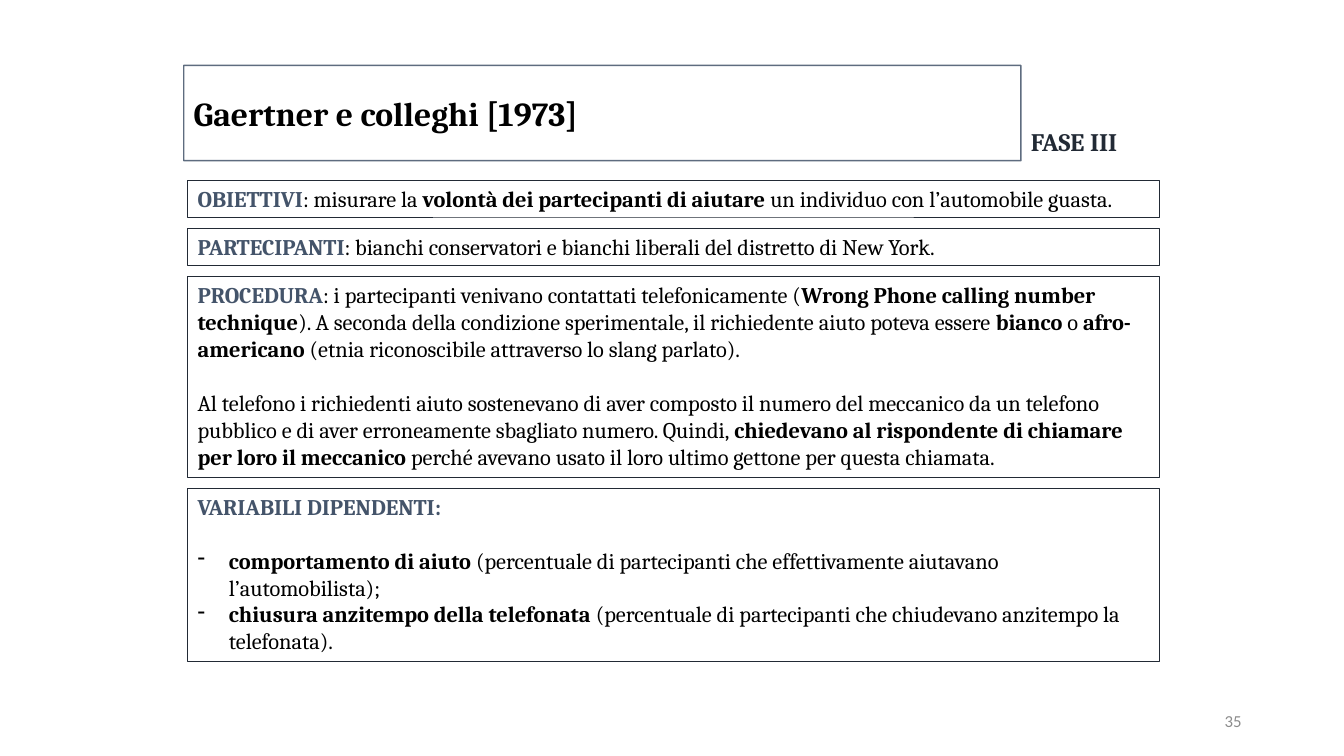
from lxml.etree import SubElement
from pptx import Presentation
from pptx.dml.color import RGBColor
from pptx.enum.shapes import MSO_SHAPE
from pptx.enum.text import MSO_ANCHOR, PP_ALIGN
from pptx.oxml.ns import qn
from pptx.util import Cm, Pt

SLATE, INK, BLACK, GREY = "44546A", "222A35", "000000", "8C8C8C"
BLANK_LINE = 19.2  # points, one line of 16 pt text

# Each section: height in cm, label, paragraphs as (text, space before, dashed).
# Text between asterisks is bold; the first paragraph follows the label.
SECTIONS = [
    (0.94, "OBIETTIVI", [
        (": misurare la *volontà dei partecipanti di aiutare *"
         "un individuo con l’automobile guasta.", 0, False)]),
    (0.94, "PARTECIPANTI", [
        (": bianchi conservatori e bianchi liberali del distretto di New York.", 0, False)]),
    (5.05, "PROCEDURA", [
        (": i partecipanti venivano contattati telefonicamente "
         "(*Wrong Phone calling number technique*). A seconda della condizione "
         "sperimentale, il richiedente aiuto poteva essere *bianco* o "
         "*afro-americano* (etnia riconoscibile attraverso lo slang parlato).", 0, False),
        ("Al telefono i richiedenti aiuto sostenevano di aver composto il numero del "
         "meccanico da un telefono pubblico e di aver erroneamente sbagliato numero. "
         "Quindi, *chiedevano al rispondente di chiamare per loro il meccanico* "
         "perché avevano usato il loro ultimo gettone per questa chiamata.",
         BLANK_LINE, False)]),
    (4.37, "VARIABILI DIPENDENTI:", [
        ("", 0, False),
        ("*comportamento di aiuto *(percentuale di partecipanti che "
         "effettivamente aiutavano l’automobilista);", BLANK_LINE, True),
        ("*chiusura anzitempo della telefonata *(percentuale di partecipanti "
         "che chiudevano anzitempo la telefonata).", 0, True)]),
]


def rgb(hex_color):
    return RGBColor.from_string(hex_color)


def add_text(paragraph, text, size=16, color=BLACK, bold=False, font="Cambria"):
    run = paragraph.add_run()
    run.text = text
    run.font.name = font
    run.font.size = Pt(size)
    run.font.bold = bold
    run.font.color.rgb = rgb(color)


def add_marked_text(paragraph, text):
    """Adds text whose parts between asterisks are bold."""
    for index, part in enumerate(text.split("*")):
        if part:
            add_text(paragraph, part, bold=index % 2 == 1)


def add_dash(paragraph):
    properties = paragraph._p.get_or_add_pPr()
    properties.set("marL", str(Cm(0.79)))
    properties.set("indent", str(-Cm(0.79)))
    SubElement(properties, qn("a:buFontTx"))
    SubElement(properties, qn("a:buChar")).set("char", "-")


def add_frame(slide, box, color, width, anchor=MSO_ANCHOR.TOP):
    frame = slide.shapes.add_shape(MSO_SHAPE.RECTANGLE, *map(Cm, box))
    frame.shadow.inherit = False
    frame.fill.background()
    frame.line.color.rgb = rgb(color)
    frame.line.width = Pt(width)
    frame.text_frame.word_wrap = True
    frame.text_frame.vertical_anchor = anchor
    frame.text_frame.paragraphs[0].alignment = PP_ALIGN.LEFT
    return frame


def add_title(slide, box):
    title = add_frame(slide, box, SLATE, 1, MSO_ANCHOR.MIDDLE)
    line_color = title.line._ln.find(".//" + qn("a:srgbClr"))
    SubElement(line_color, qn("a:alpha")).set("val", "86000")
    add_text(title.text_frame.paragraphs[0], "Gaertner e colleghi [1973]",
             size=24, bold=True)


def add_label(slide, box, text, align=PP_ALIGN.LEFT, anchor=MSO_ANCHOR.TOP, **style):
    label = slide.shapes.add_textbox(*map(Cm, box)).text_frame
    label.word_wrap = True
    label.vertical_anchor = anchor
    label.paragraphs[0].alignment = align
    add_text(label.paragraphs[0], text, **style)


def add_section(slide, box, heading, paragraphs):
    body = add_frame(slide, box, INK, 0.25).text_frame
    add_text(body.paragraphs[0], heading, color=SLATE, bold=True)
    for index, (text, space, dashed) in enumerate(paragraphs):
        paragraph = body.add_paragraph() if index else body.paragraphs[0]
        paragraph.alignment = PP_ALIGN.LEFT
        if space:
            paragraph.space_before = Pt(space)
        if dashed:
            add_dash(paragraph)
        add_marked_text(paragraph, text)


def add_sections(slide, left, top, width, gap):
    for height, heading, paragraphs in SECTIONS:
        add_section(slide, (left, top, width, height), heading, paragraphs)
        top += height + gap


def main():
    deck = Presentation()
    deck.slide_width, deck.slide_height = Cm(33.87), Cm(19.05)
    slide = deck.slides.add_slide(deck.slide_layouts[6])
    add_title(slide, (4.63, 1.65, 21.1, 2.4))
    add_label(slide, (25.73, 3.05, 2.8, 1.02), "FASE III",
              size=18, color=INK, bold=True)
    add_sections(slide, left=4.73, top=4.53, width=24.48, gap=0.28)
    add_label(slide, (23.92, 17.65, 7.62, 1.02), "35", PP_ALIGN.RIGHT,
              MSO_ANCHOR.MIDDLE, size=12, color=GREY, font="Calibri")
    deck.save("out.pptx")


if __name__ == "__main__":
    main()
